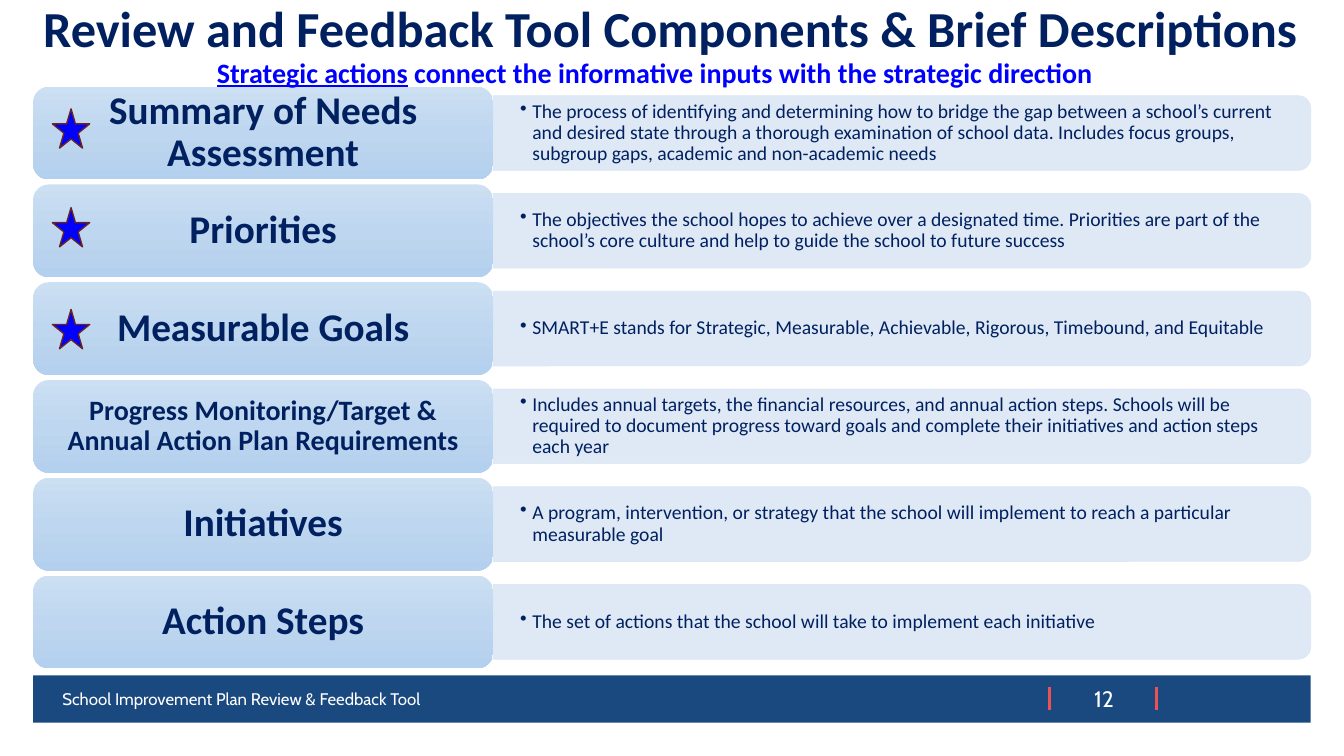
from copy import deepcopy

from lxml import etree
from pptx import Presentation
from pptx.dml.color import RGBColor
from pptx.enum.shapes import MSO_CONNECTOR, MSO_SHAPE
from pptx.enum.text import MSO_ANCHOR, PP_ALIGN
from pptx.oxml.ns import qn
from pptx.util import Inches, Pt

LEFT, CENTER = PP_ALIGN.LEFT, PP_ALIGN.CENTER
TOP, MIDDLE = MSO_ANCHOR.TOP, MSO_ANCHOR.MIDDLE
ROUNDED, HALF_ROUNDED = MSO_SHAPE.ROUNDED_RECTANGLE, MSO_SHAPE.ROUND_2_SAME_RECTANGLE
RECTANGLE, STAR = MSO_SHAPE.RECTANGLE, MSO_SHAPE.STAR_5_POINT
STRAIGHT = MSO_CONNECTOR.STRAIGHT

THEME = {
    "navy": "002060", "blue": "0000FF", "white": "FFFFFF", "panel": "DBE7F5",
    "footer": "1A497F", "tick": "EC5153", "star_line": "672424",
    "label_gradient": ["CCDFF3", "BED6EF", "B4D0EF"],
    "body_font": "Calibri", "footer_font": "Cabin",
    "title": 36, "subtitle": 20, "label": 28, "small_label": 20,
    "description": 14, "page": 16, "footer_text": 12,
}

# Grid, in inches
SLIDE_WIDTH, SLIDE_HEIGHT = 13.33, 7.5
MARGIN, CONTENT_WIDTH = 0.33, 12.67
ROW_TOP, ROW_PITCH, ROW_HEIGHT = 0.86, 0.97, 0.92
LABEL_WIDTH = 4.56
PANEL_LEFT = MARGIN + LABEL_WIDTH
PANEL_WIDTH, PANEL_HEIGHT = CONTENT_WIDTH - LABEL_WIDTH, 0.74
TEXT_WIDTH, TEXT_HEIGHT = 8.07, 0.67
FOOTER_TOP, FOOTER_HEIGHT = 6.7, 0.47

# Label, label size, star offset within the row, description
COMPONENTS = [
    ("Summary of Needs Assessment", "label", 0.22,
     "The process of identifying and determining how to bridge the gap between a "
     "school’s current and desired state through a thorough examination of school data. "
     "Includes focus groups, subgroup gaps, academic and non-academic needs"),
    ("Priorities", "label", 0.23,
     "The objectives the school hopes to achieve over a designated time. Priorities are "
     "part of the school’s core culture and help to guide the school to future success"),
    ("Measurable Goals", "label", 0.27,
     "SMART+E stands for Strategic, Measurable, Achievable, Rigorous, Timebound, "
     "and Equitable"),
    ("Progress Monitoring/Target & Annual Action Plan Requirements", "small_label", None,
     "Includes annual targets, the financial resources, and annual action steps. Schools "
     "will be required to document progress toward goals and complete their initiatives "
     "and action steps each year"),
    ("Initiatives", "label", None,
     "A program, intervention, or strategy that the school will implement to reach a "
     "particular measurable goal"),
    ("Action Steps", "label", None,
     "The set of actions that the school will take to implement each initiative"),
]

presentation = Presentation()
presentation.slide_width = Inches(SLIDE_WIDTH)
presentation.slide_height = Inches(SLIDE_HEIGHT)
slide = presentation.slides.add_slide(presentation.slide_layouts[6])


def add_block(kind, left, top, width, height, fill=None, line=None, line_width=1):
    """Add a preset shape, or a text box when kind is None."""
    box = [Inches(value) for value in (left, top, width, height)]
    if kind is None:
        return slide.shapes.add_textbox(*box)
    shape = slide.shapes.add_shape(kind, *box)
    shape.shadow.inherit = False
    if fill:
        shape.fill.solid()
        shape.fill.fore_color.rgb = RGBColor.from_string(fill)
    if line:
        shape.line.color.rgb = RGBColor.from_string(line)
        shape.line.width = Pt(line_width)
    else:
        shape.line.fill.background()
    return shape


def write(shape, texts, size, color="navy", font="body_font", bold=False, align=LEFT,
          anchor=MIDDLE, insets=(0.1, 0.05), spacing=None, bullet=False):
    """Fill a shape with one paragraph made of the given runs."""
    frame = shape.text_frame
    frame.word_wrap = True
    frame.vertical_anchor = anchor
    frame.margin_left = frame.margin_right = Inches(insets[0])
    frame.margin_top = frame.margin_bottom = Inches(insets[1])
    paragraph = frame.paragraphs[0]
    paragraph.alignment = align
    if spacing:
        paragraph.line_spacing = spacing
    if bullet:
        properties = paragraph._p.get_or_add_pPr()
        properties.set("marL", str(Inches(0.12)))
        properties.set("indent", str(-Inches(0.12)))
        etree.SubElement(properties, qn("a:buChar")).set("char", "•")
    for text in texts:
        run = paragraph.add_run()
        run.text = text
        run.font.name = THEME[font]
        run.font.size = Pt(THEME[size])
        run.font.bold = bold
        run.font.color.rgb = RGBColor.from_string(THEME[color])
    return paragraph


# Footer band with the two ticks around the page number
add_block(RECTANGLE, MARGIN, FOOTER_TOP, CONTENT_WIDTH, FOOTER_HEIGHT, THEME["footer"])
for tick_left in (10.41, 11.47):
    tick = slide.shapes.add_connector(
        STRAIGHT, Inches(tick_left), Inches(FOOTER_TOP + 0.12),
        Inches(tick_left), Inches(FOOTER_TOP + 0.34))
    tick.line.color.rgb = RGBColor.from_string(THEME["tick"])
    tick.line.width = Pt(2.25)
    etree.SubElement(tick._element.spPr, qn("a:effectLst"))
write(add_block(None, 10.63, 6.75, 0.64, 0.37), ["12"], "page", "white",
      "footer_font", align=CENTER)
write(add_block(None, 0.52, 6.73, 8.47, 0.4),
      ["School Improvement Plan Review & Feedback Tool"], "footer_text", "white",
      "footer_font")

# Title
write(add_block(None, MARGIN, -0.01, CONTENT_WIDTH, 0.77),
      ["Review and Feedback Tool Components & Brief Descriptions"], "title",
      bold=True, anchor=TOP, spacing=0.9)

# Component rows
for row, (label, label_size, star_offset, description) in enumerate(COMPONENTS):
    top = ROW_TOP + row * ROW_PITCH
    middle = top + ROW_HEIGHT / 2

    # The panel is an upright shape turned so its round corners face right
    panel = add_block(HALF_ROUNDED, PANEL_LEFT + (PANEL_WIDTH - PANEL_HEIGHT) / 2,
                      middle - PANEL_WIDTH / 2, PANEL_HEIGHT, PANEL_WIDTH,
                      THEME["panel"], THEME["panel"], 0.5)
    panel.rotation = 90
    for color in panel._element.spPr.iter(qn("a:srgbClr")):
        etree.SubElement(color, qn("a:alpha")).set("val", "90000")
    write(add_block(None, PANEL_LEFT, middle - TEXT_HEIGHT / 2, TEXT_WIDTH, TEXT_HEIGHT),
          [description], "description", insets=(0.27, 0.14), spacing=0.9, bullet=True)

    label_box = add_block(ROUNDED, MARGIN, top, LABEL_WIDTH, ROW_HEIGHT)
    label_box.fill.gradient()
    label_box.fill.gradient_angle = 270
    first_stop = next(label_box._element.spPr.iter(qn("a:gs")))
    first_stop.addnext(deepcopy(first_stop))
    for index, stop in enumerate(label_box.fill.gradient_stops):
        stop.position = index / 2
        stop.color.rgb = RGBColor.from_string(THEME["label_gradient"][index])
    write(label_box, [label], label_size, bold=True, align=CENTER,
          insets=(0.15, 0.1), spacing=0.9)

    if star_offset:
        add_block(STAR, 0.52, top + star_offset, 0.37, 0.39,
                  THEME["blue"], THEME["star_line"])

# Subtitle
subtitle = write(add_block(None, 0.16, 0.42, CONTENT_WIDTH, 0.55),
                 ["Strategic actions",
                  " connect the informative inputs with the strategic direction"],
                 "subtitle", "blue", bold=True, align=CENTER, anchor=TOP, spacing=1.23)
subtitle.runs[0].font.underline = True

presentation.save("out.pptx")
